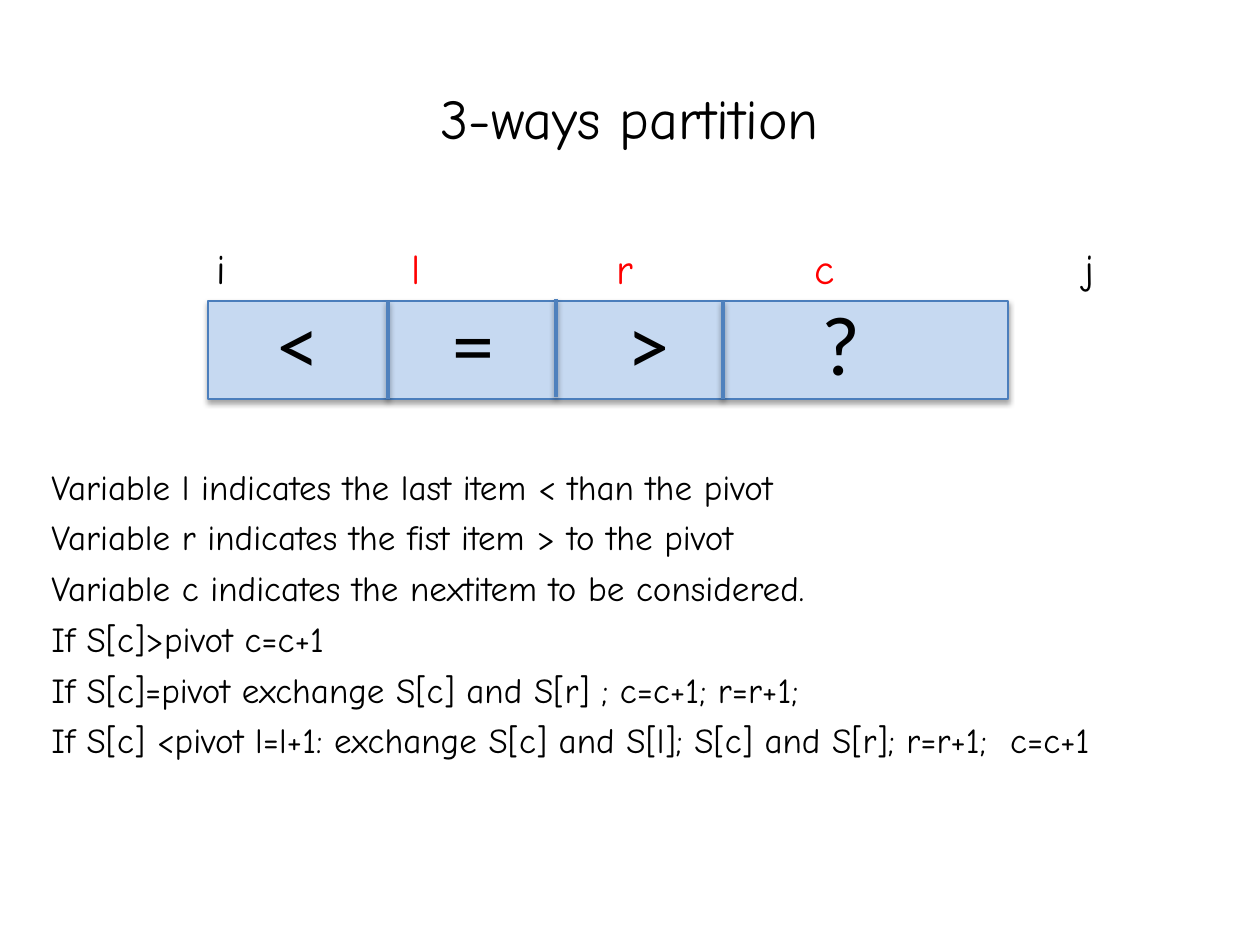
from lxml import etree
from pptx import Presentation, util as u
from pptx.dml.color import RGBColor
from pptx.enum import shapes, text
from pptx.oxml.ns import qn

EMU = 914400 / 126  # one px
FONT = "Comic Neue"
BLACK, RED, BLUE = "000000", "FF0000", "4F81BD"
RULES = [
    "Variable l indicates the last item < than the pivot",
    "Variable r indicates the fist item > to the pivot",
    "Variable c indicates the nextitem to be considered.",
    "If S[c]>pivot c=c+1",
    "If S[c]=pivot exchange S[c] and S[r] ; c=c+1; r=r+1;",
    "If S[c] <pivot l=l+1: exchange S[c] and S[l]; S[c] and S[r]; r=r+1;  c=c+1",
]


def px(*nums):
    return [u.Emu(round(n * EMU)) for n in nums]


def color(code):
    return RGBColor.from_string(code)


def put(item, vals):
    for name, val in vals.items():
        setattr(item, name, val)


def write(slide, box, lines, size, font=FONT, gap=0, stops=(), **form):
    """Each line is a list of (words, colour) runs."""
    frame = slide.shapes.add_textbox(*px(*box)).text_frame
    put(frame, {"word_wrap": True, **form})
    for n, line in enumerate(lines):
        par = frame.paragraphs[0] if n == 0 else frame.add_paragraph()
        if n and gap:
            par.space_before = u.Pt(gap)
        if stops:
            tabs = etree.SubElement(par._p.get_or_add_pPr(), qn("a:tabLst"))
            for pos in px(*stops):
                etree.SubElement(tabs, qn("a:tab"), pos=str(pos), algn="l")
        for words, code in line:
            run = par.add_run()
            run.text = words
            put(run.font, {"name": font, "size": u.Pt(size)})
            run.font.color.rgb = color(code)
    return frame


def shade(item, dist, alpha):
    """Soft black shadow straight below."""
    props = item._element.spPr
    fx = props.find(qn("a:effectLst"))
    if fx is None:
        fx = etree.SubElement(props, qn("a:effectLst"))
    drop = etree.SubElement(fx, qn("a:outerShdw"), blurRad="40000",
                            dist=str(dist), dir="5400000", rotWithShape="0")
    tone = etree.SubElement(drop, qn("a:srgbClr"), val=BLACK)
    etree.SubElement(tone, qn("a:alpha"), val=str(alpha * 1000))


def ink(item, code, width):
    item.line.color.rgb = color(code)
    item.line.width = u.Pt(width)


def bar(slide, box):
    rect = slide.shapes.add_shape(shapes.MSO_SHAPE.RECTANGLE, *px(*box))
    rect.shadow.inherit = False
    rect.fill.solid()
    rect.fill.fore_color.rgb = color("C6D9F1")
    ink(rect, "4B7EBC", 0.75)
    shade(rect, 23000, 35)


def split(slide, x, top, high):
    line = slide.shapes.add_connector(shapes.MSO_CONNECTOR.STRAIGHT,
                                      *px(x, top, x, top + high))
    ink(line, BLUE, 2)
    shade(line, 20000, 38)


def main():
    deck = Presentation()
    deck.slide_width, deck.slide_height = px(1260, 945)
    slide = deck.slides.add_slide(deck.slide_layouts[6])

    # Title
    title = write(slide, (63, 38, 1134, 158), [[("3-ways partition", BLACK)]],
                  32, vertical_anchor=text.MSO_ANCHOR.MIDDLE)
    title.paragraphs[0].alignment = text.PP_ALIGN.CENTER

    # Index names above the array
    marks = [("i", BLACK), ("\tl", RED), ("\tr", RED), ("\tc", RED), ("\tj", BLACK)]
    write(slide, (204, 236, 1040, 62), [marks], 24, stops=(195, 400, 598, 868))

    # Rules
    write(slide, (39, 459, 1205, 310), [[(rule, BLACK)] for rule in RULES],
          20, gap=5)

    # Array and its dividers
    bar(slide, (208, 301, 800, 98))
    for x, top in ((388, 301), (556, 299), (723, 301)):
        split(slide, x, top, 98)

    # Content of each part
    write(slide, (265, 285, 679, 115), [[("<\t=\t>\t?", BLACK)]], 48,
          font="Calibri", stops=(175, 350, 544))

    deck.save("out.pptx")


if __name__ == "__main__":
    main()
